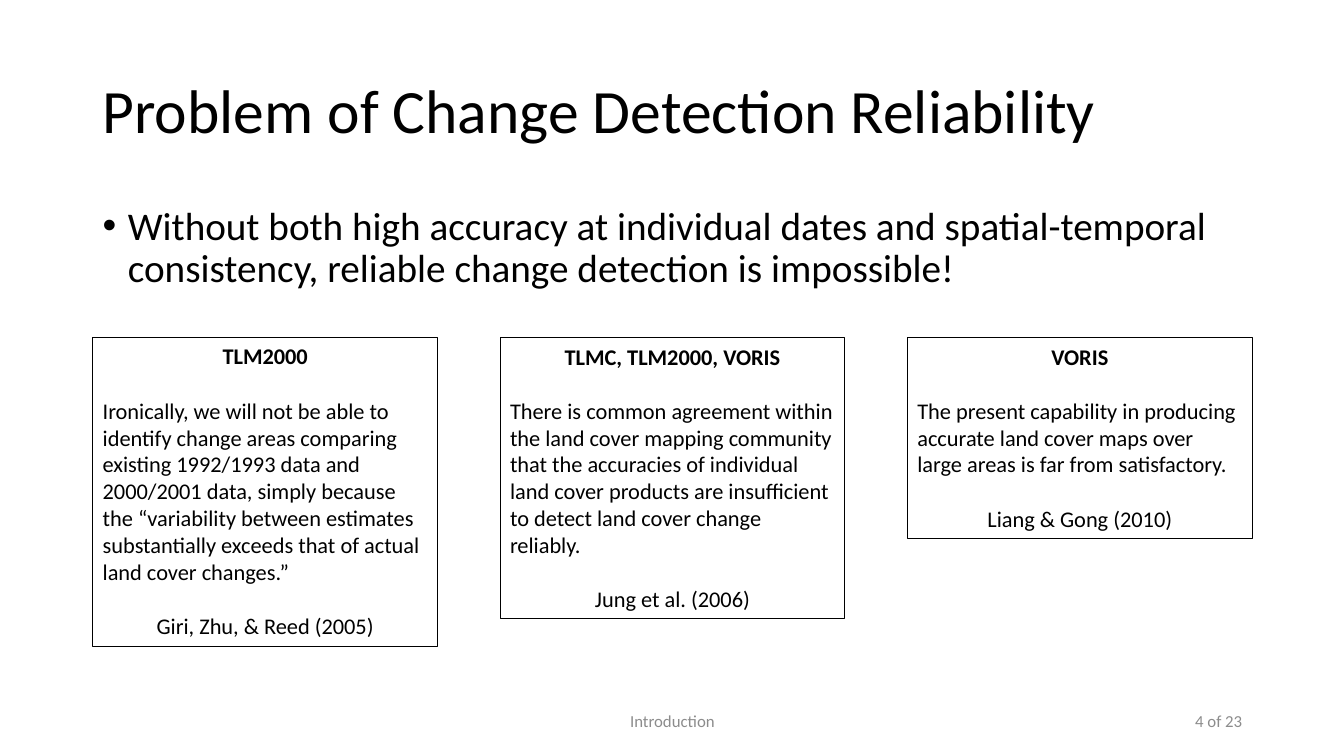
from lxml import etree
from pptx import Presentation
from pptx.dml.color import RGBColor
from pptx.enum.shapes import MSO_SHAPE
from pptx.enum.text import MSO_ANCHOR, MSO_AUTO_SIZE, PP_ALIGN
from pptx.oxml.ns import qn
from pptx.util import Inches, Pt

RECT = MSO_SHAPE.RECTANGLE
TOP, MIDDLE = MSO_ANCHOR.TOP, MSO_ANCHOR.MIDDLE
LEFT, CENTER, RIGHT = PP_ALIGN.LEFT, PP_ALIGN.CENTER, PP_ALIGN.RIGHT
GROW = MSO_AUTO_SIZE.SHAPE_TO_FIT_TEXT
COLORS = {"ink": "000000", "muted": "8C8C8C"}


class Deck:
    """Holds the text style and the current slide, and adds elements to it."""

    def __init__(self, slide, font="Calibri"):
        self.slide = slide
        self.font = font

    def color(self, name):
        return RGBColor.from_string(COLORS[name])

    def style(self, para, size, color="ink", bold=False, align=LEFT):
        para.alignment = align
        for run in para.runs:
            run.font.name = self.font
            run.font.size = Pt(size)
            run.font.bold = bold
            run.font.color.rgb = self.color(color)

    def text(self, words, at, size, color="ink", align=LEFT, anchor=MIDDLE):
        box = self.slide.shapes.add_textbox(*map(Inches, at))
        frame = box.text_frame
        frame.word_wrap = True
        frame.vertical_anchor = anchor
        frame.text = words
        para = frame.paragraphs[0]
        self.style(para, size, color, align=align)
        return para

    def title(self, words, at):
        self.text(words, at, 44).line_spacing = 0.9

    def bullet(self, words, at):
        para = self.text(words, at, 28, anchor=TOP)
        para.line_spacing = 0.9
        para.space_before = Pt(10)
        props = para._p.get_or_add_pPr()
        props.set("marL", str(Inches(0.25)))
        props.set("indent", str(-Inches(0.25)))
        etree.SubElement(props, qn("a:buFont")).set("typeface", "Arial")
        etree.SubElement(props, qn("a:buChar")).set("char", "•")

    def quote(self, head, body, cite, at):
        card = self.slide.shapes.add_shape(RECT, *map(Inches, at))
        card.shadow.inherit = False
        card.fill.background()
        card.line.color.rgb = self.color("ink")
        card.line.width = Pt(0.75)
        frame = card.text_frame
        frame.word_wrap = True
        frame.auto_size = GROW
        frame.vertical_anchor = TOP
        frame.text = "\n".join((head, body, cite))
        first, middle, last = frame.paragraphs
        self.style(first, 16, bold=True, align=CENTER)
        self.style(middle, 16)
        self.style(last, 16, align=CENTER)
        for para in (middle, last):
            para.space_before = Pt(19.5)


QUOTES = [
    ("TLM2000",
     "Ironically, we will not be able to identify change areas comparing "
     "existing 1992/1993 data and 2000/2001 data, simply because the "
     "“variability between estimates substantially exceeds that of actual "
     "land cover changes.”",
     "Giri, Zhu, & Reed (2005)", 3.06),
    ("TLMC, TLM2000, VORIS",
     "There is common agreement within the land cover mapping community that "
     "the accuracies of individual land cover products are insufficient to "
     "detect land cover change reliably.",
     "Jung et al. (2006)", 2.79),
    ("VORIS",
     "The present capability in producing accurate land cover maps over large "
     "areas is far from satisfactory.",
     "Liang & Gong (2010)", 1.99),
]


def main():
    prs = Presentation()
    prs.slide_width, prs.slide_height = Inches(13.33), Inches(7.5)
    deck = Deck(prs.slides.add_slide(prs.slide_layouts[6]))
    edge, step = 0.92, 4.04
    deck.title("Problem of Change Detection Reliability",
               (edge, 0.4, 11.5, 1.45))
    deck.bullet("Without both high accuracy at individual dates and "
                "spatial-temporal consistency, reliable change detection is "
                "impossible!", (edge, 2, 11.5, 4.76))
    for i, (head, body, cite, height) in enumerate(QUOTES):
        deck.quote(head, body, cite, (edge + i * step, 3.35, 3.42, height))
    deck.text("Introduction", (4.42, 6.95, 4.5, 0.4), 12, "muted", CENTER)
    deck.text("4 of 23", (9.42, 6.95, 3, 0.4), 12, "muted", RIGHT)
    prs.save("out.pptx")


if __name__ == "__main__":
    main()
